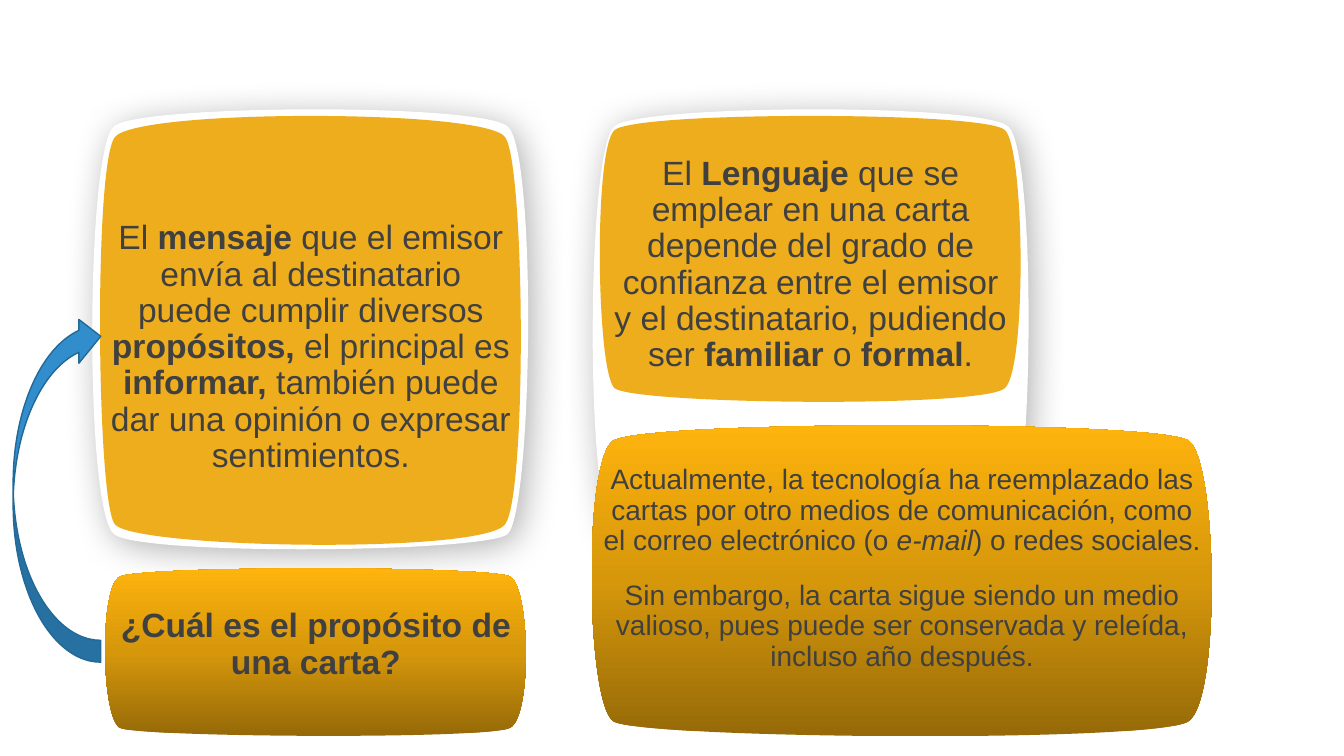
from copy import deepcopy

from lxml import etree
from pptx import Presentation
from pptx.dml.color import RGBColor
from pptx.enum.shapes import MSO_SHAPE as Shape
from pptx.enum.text import MSO_ANCHOR as Anchor, PP_ALIGN as Align
from pptx.oxml import parse_xml
from pptx.oxml.ns import nsdecls, qn
from pptx.util import Pt

GOLD = "EEAD1D"
GOLD_STOPS = ((0, "966A08"), (0.5, "D6970B"), (1, "FEB30D"))

# Outlines in thousandths of the box: start point, then cubic curves.
CARD = ((500, 0), (
    ((720, 0), (940, 16), (963, 50)),
    ((1010, 116), (1015, 882), (963, 953)),
    ((912, 1024), (77, 1010), (33, 953)),
    ((-10, 894), (-17, 118), (33, 50)),
    ((60, 16), (278, 0), (500, 0)),
))
FRAME = ((933, 51), (
    ((1000, 100), (989, 911), (933, 953)),
    ((876, 993), (131, 1000), (67, 953)),
    ((0, 904), (4, 96), (67, 51)),
    ((127, 4), (864, 0), (933, 51)),
))

PURPOSE = [[
    ("El ", ""), ("mensaje", "b"),
    (" que el emisor envía al destinatario puede cumplir diversos ", ""),
    ("propósitos, ", "b"), ("el principal es ", ""), ("informar, ", "b"),
    ("también puede dar una opinión o expresar sentimientos.", ""),
]]
LANGUAGE = [[
    ("El ", ""), ("Lenguaje", "b"),
    (" que se emplear en una carta depende del grado de confianza entre "
     "el emisor y el destinatario, pudiendo ser ", ""),
    ("familiar", "b"), (" o ", ""), ("formal", "b"), (".", ""),
]]
QUESTION = [[("¿Cuál es el propósito de una carta?", "b")]]
TECHNOLOGY = [
    [("Actualmente, la tecnología ha reemplazado las cartas por otro medios "
      "de comunicación, como el correo electrónico (o ", ""),
     ("e-mail", "i"), (") o redes sociales.", "")],
    [("Sin embargo, la carta sigue siendo un medio valioso, pues puede ser "
      "conservada y releída, incluso año después.", "")],
]


def color(value):
    return RGBColor.from_string(value)


def add_barrel(slide, bounds, outline):
    """Add a borderless closed shape whose sides are cubic curves."""
    left, top, width, height = (Pt(length) for length in bounds)
    right, bottom = left + width, top + height
    builder = slide.shapes.build_freeform(left, top)
    builder.add_line_segments([(right, top), (right, bottom), (left, bottom)])
    barrel = builder.convert_to_shape()
    barrel.shadow.inherit = False
    barrel.line.fill.background()

    path = next(barrel.element.spPr.iter(qn("a:path")))
    for child in list(path):
        path.remove(child)
    path.set("w", "1000")
    path.set("h", "1000")
    start, curves = outline
    for tag, points in [("a:moveTo", [start])] + [("a:cubicBezTo", c) for c in curves]:
        step = etree.SubElement(path, qn(tag))
        for x, y in points:
            etree.SubElement(step, qn("a:pt"), x=str(x), y=str(y))
    etree.SubElement(path, qn("a:close"))
    return barrel


def fill_solid(shape, value):
    shape.fill.solid()
    shape.fill.fore_color.rgb = color(value)


def fill_gradient(shape, stops):
    shape.fill.gradient()
    shape.fill.gradient_angle = 90
    stop_list = next(shape.element.spPr.iter(qn("a:gsLst")))
    while len(stop_list) < len(stops):
        stop_list.append(deepcopy(stop_list[0]))
    for stop, (position, value) in zip(shape.fill.gradient_stops, stops):
        stop.position = position
        stop.color.rgb = color(value)


def add_frame(slide, bounds):
    """Add a white backing shape with a soft shadow."""
    frame = add_barrel(slide, bounds, FRAME)
    fill_solid(frame, "FFFFFF")
    frame.element.spPr.find(qn("a:effectLst")).append(parse_xml(
        f'<a:outerShdw {nsdecls("a")} blurRad="{Pt(25)}" dist="{Pt(5)}" '
        'dir="2700000" algn="tl" rotWithShape="0">'
        '<a:srgbClr val="000000"><a:alpha val="30000"/></a:srgbClr>'
        '</a:outerShdw>'))


def write_text(shape, paragraphs, size, anchor):
    box = shape.text_frame
    layout = {"word_wrap": True, "vertical_anchor": anchor,
              "margin_left": Pt(7.2), "margin_right": Pt(7.2),
              "margin_top": Pt(28.8), "margin_bottom": Pt(3.6)}
    for name, value in layout.items():
        setattr(box, name, value)
    for index, pieces in enumerate(paragraphs):
        para = box.add_paragraph() if index else box.paragraphs[0]
        spacing = {"alignment": Align.CENTER, "line_spacing": 0.9,
                   "space_before": Pt(18 if index else 0)}
        for name, value in spacing.items():
            setattr(para, name, value)
        for text, style in pieces:
            span = para.add_run()
            span.text = text
            look = {"name": "Arial", "size": Pt(size),
                    "bold": style == "b", "italic": style == "i"}
            for name, value in look.items():
                setattr(span.font, name, value)
            span.font.color.rgb = color("404040")


def add_card(slide, bounds, paragraphs, size=24, gradient=False, anchor=Anchor.TOP):
    card = add_barrel(slide, bounds, CARD)
    if gradient:
        fill_gradient(card, GOLD_STOPS)
    else:
        fill_solid(card, GOLD)
    write_text(card, paragraphs, size, anchor)


def add_curved_arrow(slide, bounds):
    arrow = slide.shapes.add_shape(
        Shape.CURVED_DOWN_ARROW, *(Pt(length) for length in bounds))
    arrow.rotation = 270
    arrow.shadow.inherit = False
    fill_solid(arrow, "318DCB")
    arrow.line.color.rgb = color("246896")
    arrow.line.width = Pt(1)


def main():
    deck = Presentation()
    deck.slide_width, deck.slide_height = Pt(960), Pt(540)
    page = deck.slides.add_slide(deck.slide_layouts[6])
    for left in (60, 417.5):
        add_frame(page, (left, 73.5, 324, 323.5))
    add_card(page, (72, 82.8, 300, 306), PURPOSE, anchor=Anchor.MIDDLE)
    add_card(page, (429, 82.8, 300, 204), LANGUAGE)
    add_card(page, (75.6, 406, 300, 119.5), QUESTION, gradient=True)
    add_curved_arrow(page, (-83.5, 317.5, 248.4, 62.6))
    add_card(page, (423.4, 303.8, 442, 221.8), TECHNOLOGY, size=20, gradient=True)
    deck.save("out.pptx")


if __name__ == "__main__":
    main()
